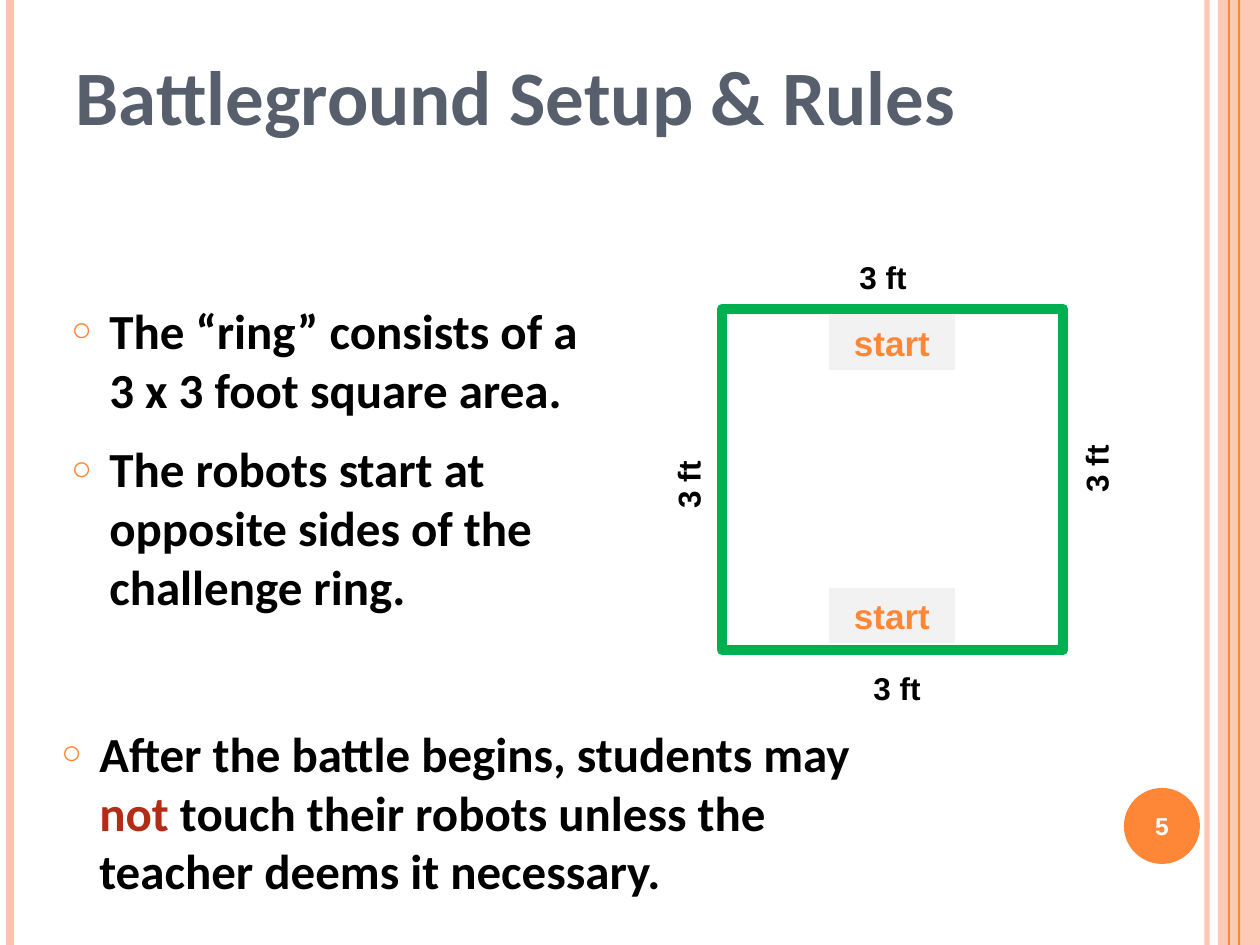
"""Build the battleground setup and rules slide."""
from lxml.etree import SubElement
from pptx import Presentation
from pptx.dml.color import RGBColor
from pptx.enum.shapes import MSO_CONNECTOR, MSO_SHAPE
from pptx.enum.text import MSO_ANCHOR, MSO_AUTO_SIZE, PP_ALIGN
from pptx.oxml.ns import qn
from pptx.util import Emu, Pt

SCALE = 914400 / 126
ORANGE = RGBColor(0xFE, 0x86, 0x37)
PEACH = RGBColor(0xFE, 0xC3, 0xAE)
SLATE = RGBColor(0x57, 0x5F, 0x6D)
RED = RGBColor(0xB3, 0x2C, 0x16)
GREEN = RGBColor(0x00, 0xB0, 0x50)
GRAY = RGBColor(0xF2, 0xF2, 0xF2)
BLACK = RGBColor(0x00, 0x00, 0x00)
WHITE = RGBColor(0xFF, 0xFF, 0xFF)


def px(*lengths):
    return [Emu(round(length * SCALE)) for length in lengths]


def add_span(para, text, size, font, color):
    span = para.add_run()
    span.text = text
    span.font.size = Pt(size)
    span.font.name = font
    span.font.bold = True
    span.font.color.rgb = color


deck = Presentation()
deck.slide_width, deck.slide_height = px(1260, 945)
page = deck.slides.add_slide(deck.slide_layouts[5])

title = page.shapes.title
title.left, title.top, title.width, title.height = px(63, 38, 1081, 109)
title.text_frame.word_wrap = True
title.text_frame.auto_size = MSO_AUTO_SIZE.NONE
title.text_frame.vertical_anchor = MSO_ANCHOR.BOTTOM
para = title.text_frame.paragraphs[0]
para.alignment = PP_ALIGN.LEFT
add_span(para, "Battleground Setup & Rules", 44, "Calibri", SLATE)

band = page.shapes.add_shape(MSO_SHAPE.RECTANGLE, *px(1218, 0, 42, 945))
band.shadow.inherit = False
band.fill.solid()
band.fill.fore_color.rgb = PEACH
band_color = band.fill._xPr.find(qn("a:solidFill"))[0]
SubElement(band_color, qn("a:alpha"), val="87000")
band.line.fill.background()

for x, color, weight in [
    (1207, PEACH, 3),
    (10, PEACH, 4.5),
    (1239, ORANGE, 1.5),
    (1229, ORANGE, 0.75),
]:
    stripe = page.shapes.add_connector(MSO_CONNECTOR.STRAIGHT, *px(x, 0, x, 945))
    stripe.line.color.rgb = color
    stripe.line.width = Pt(weight)
    SubElement(stripe._element.spPr, qn("a:effectLst"))
    if weight == 3:
        stripe_color = stripe.line.fill._xPr.find(qn("a:solidFill"))[0]
        SubElement(stripe_color, qn("a:alpha"), val="93000")

badge = page.shapes.add_shape(MSO_SHAPE.OVAL, *px(1124, 788, 76, 76))
badge.shadow.inherit = False
badge.fill.solid()
badge.fill.fore_color.rgb = ORANGE
badge.line.fill.background()
number = page.shapes.add_textbox(*px(1120, 790, 84, 72))
number.text_frame.word_wrap = True
number.text_frame.vertical_anchor = MSO_ANCHOR.MIDDLE
para = number.text_frame.paragraphs[0]
para.alignment = PP_ALIGN.CENTER
add_span(para, "5", 14, "Arial", WHITE)

ring_rules = [
    [("The “ring” consists of a 3 x 3 foot square area.", BLACK)],
    [("The robots start at opposite sides of the challenge ring.", BLACK)],
]
touch_rules = [
    [
        ("After the battle begins, students may ", BLACK),
        ("not", RED),
        (" touch their robots unless the teacher deems it necessary.", BLACK),
    ]
]
for frame, rules in [((59, 294, 556, 377), ring_rules), ((49, 717, 886, 207), touch_rules)]:
    box = page.shapes.add_textbox(*px(*frame))
    box.text_frame.word_wrap = True
    for index, rule in enumerate(rules):
        para = box.text_frame.add_paragraph() if index else box.text_frame.paragraphs[0]
        para.space_before = para.space_after = Pt(6)
        properties = para._p.get_or_add_pPr()
        indent = px(38)[0]
        properties.set("marL", str(indent))
        properties.set("indent", str(-indent))
        bullet_color = SubElement(properties, qn("a:buClr"))
        SubElement(bullet_color, qn("a:srgbClr"), val=str(ORANGE))
        SubElement(properties, qn("a:buSzPct"), val="70000")
        SubElement(properties, qn("a:buFont"), typeface="Arial")
        SubElement(properties, qn("a:buChar"), char="○")
        for text, color in rule:
            add_span(para, text, 28, "Calibri", color)

for top in (315, 588):
    start = page.shapes.add_shape(MSO_SHAPE.RECTANGLE, *px(829, top, 126, 55))
    start.shadow.inherit = False
    start.fill.solid()
    start.fill.fore_color.rgb = GRAY
    start.line.fill.background()
    para = start.text_frame.paragraphs[0]
    para.alignment = PP_ALIGN.CENTER
    add_span(para, "start", 20, "Arial", ORANGE)

for left, top, rotation in [(815, 252, 0), (620, 460, 270), (1028, 444, 270), (829, 663, 0)]:
    label = page.shapes.add_textbox(*px(left, top, 136, 50))
    label.rotation = rotation
    label.text_frame.word_wrap = True
    para = label.text_frame.paragraphs[0]
    para.alignment = PP_ALIGN.CENTER
    add_span(para, "3 ft", 18, "Arial", BLACK)

ring = page.shapes.add_shape(MSO_SHAPE.RECTANGLE, *px(722, 309, 341, 341))
ring.shadow.inherit = False
ring.fill.background()
ring.line.color.rgb = GREEN
ring.line.width = Pt(6)
SubElement(ring.line.fill._xPr, qn("a:round"))

deck.save("out.pptx")
